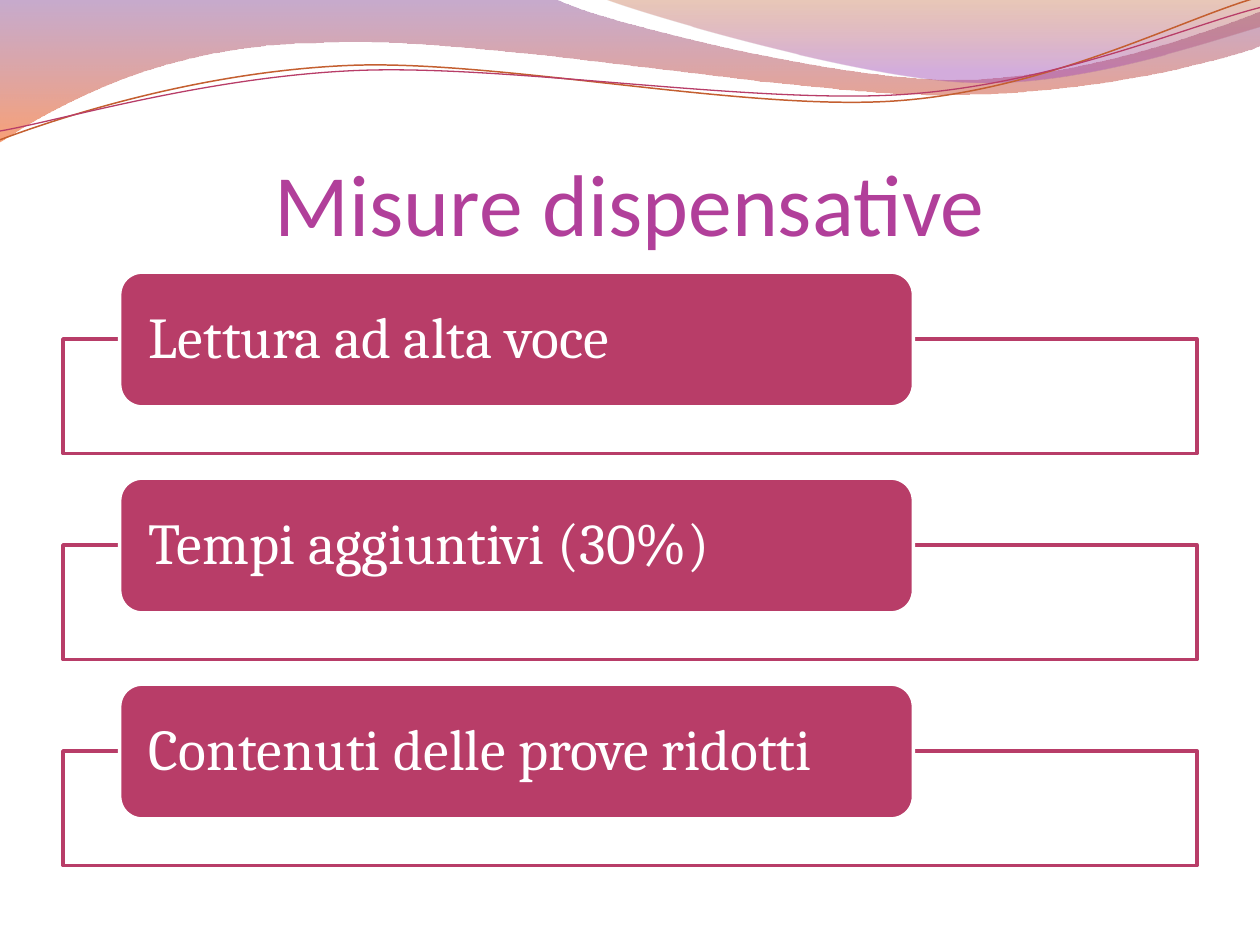
from typing import NamedTuple

from lxml.etree import SubElement
from pptx import Presentation
from pptx.dml.color import RGBColor
from pptx.enum.shapes import MSO_SHAPE as Preset
from pptx.enum.text import MSO_ANCHOR as Anchor, MSO_AUTO_SIZE as AutoSize, PP_ALIGN as Align
from pptx.oxml.ns import qn
from pptx.util import Inches, Pt

WHITE = RGBColor(0xFF, 0xFF, 0xFF)
ROSE = RGBColor(0xB8, 0x3D, 0x68)
MAGENTA = RGBColor(0xB1, 0x3F, 0x9A)
VIOLET = RGBColor(0x83, 0x45, 0x91)
LILAC = RGBColor(0xA1, 0x4B, 0xB4)
ORANGE = RGBColor(0xF3, 0x53, 0x07)
RUST = RGBColor(0xB7, 0x49, 0x15)
COPPER = RGBColor(0xC4, 0x5F, 0x30)

Point = tuple[float, float]
Segment = tuple[Point, ...]  # one point: line, three points: Bézier curve


class Stop(NamedTuple):
    position: float
    color: RGBColor
    opacity: int


class Band(NamedTuple):
    start: Point
    segments: list[Segment]
    stops: list[Stop]


class Wave(NamedTuple):
    start: Point
    segments: list[Segment]
    color: RGBColor
    width: float


BANDS = [
    Band((0, -0.01), [
        ((4.4, -0.01),),
        ((4.76, 0.17), (6.64, 0.63), (7.58, 0.63)),
        ((8.53, 0.63), (9.58, 0.26), (10, 0.09)),
        ((10.01, 0.36),),
        ((9.83, 0.44), (8.7, 0.76), (7.46, 0.75)),
        ((6.22, 0.75), (3.82, 0.28), (2.57, 0.34)),
        ((1.29, 0.35), (0.46, 0.83), (-0.01, 1.13)),
    ], [Stop(0, VIOLET, 45), Stop(1, ORANGE, 55)]),
    Band((4.79, -0.01), [
        ((5.09, 0.11), (6.82, 0.62), (7.69, 0.65)),
        ((8.56, 0.69), (9.61, 0.32), (10, 0.21)),
        ((10, 0),),
    ], [Stop(0, RUST, 30), Stop(0.8, LILAC, 45)]),
]
WAVES = [
    Wave((0, 1.11), [
        ((0.48, 0.93), (1.58, 0.57), (2.77, 0.52)),
        ((3.95, 0.47), (5.93, 0.89), (7.13, 0.8)),
        ((8.33, 0.71), (9.38, 0.15), (9.98, -0.02)),
    ], COPPER, 0.85),
    Wave((0, 1.04), [
        ((0.47, 0.96), (1.64, 0.61), (2.83, 0.56)),
        ((4.03, 0.51), (5.97, 0.83), (7.17, 0.75)),
        ((8.36, 0.67), (9.41, 0.21), (10, 0.06)),
    ], ROSE, 0.75),
]
MEASURES = ["Lettura ad alta voce", "Tempi aggiuntivi (30%)", "Contenuti delle prove ridotti"]
FIRST_TOP, LAST_TOP = 2.16, 5.43
ROW_PITCH = (LAST_TOP - FIRST_TOP) / (len(MEASURES) - 1)


def set_opacity(shape, opacities: list[int]) -> None:
    """Give each fill colour of the shape its opacity in percent."""
    for color, opacity in zip(shape.element.spPr.iter(qn("a:srgbClr")), opacities):
        SubElement(color, qn("a:alpha")).set("val", str(opacity * 1000))


def bend_curves(shape, segments: list[Segment]) -> None:
    """Join each run of three straight steps into one Bézier curve."""
    steps = iter(list(shape.element.spPr.iter(qn("a:lnTo"))))
    for segment in segments:
        curve, *others = [next(steps) for _ in segment]
        if others:
            curve.tag = qn("a:cubicBezTo")
        for other in others:
            curve.append(other[0])
            other.getparent().remove(other)


def draw_outline(slide, start: Point, segments: list[Segment], close: bool):
    points = [start] + [point for segment in segments for point in segment]
    vertices = [(Inches(x), Inches(y)) for x, y in points]
    builder = slide.shapes.build_freeform(*vertices[0])
    builder.add_line_segments(vertices[1:], close=close)
    shape = builder.convert_to_shape()
    bend_curves(shape, segments)
    shape.shadow.inherit = False
    return shape


def draw_band(slide, band: Band) -> None:
    shape = draw_outline(slide, band.start, band.segments, close=True)
    shape.line.fill.background()
    shape.fill.gradient()
    shape.fill.gradient_angle = 270
    for gradient_stop, stop in zip(shape.fill.gradient_stops, band.stops):
        gradient_stop.position = stop.position
        gradient_stop.color.rgb = stop.color
    set_opacity(shape, [stop.opacity for stop in band.stops])


def draw_wave(slide, wave: Wave) -> None:
    shape = draw_outline(slide, wave.start, wave.segments, close=False)
    shape.fill.background()
    shape.line.color.rgb = wave.color
    shape.line.width = Pt(wave.width)


def add_box(slide, preset: Preset, left: float, top: float, width: float, height: float,
            fill: RGBColor, line: RGBColor):
    shape = slide.shapes.add_shape(preset, Inches(left), Inches(top), Inches(width), Inches(height))
    shape.shadow.inherit = False
    shape.fill.solid()
    shape.fill.fore_color.rgb = fill
    shape.line.color.rgb = line
    shape.line.width = Pt(2)
    return shape


def draw_measure(slide, text: str, top: float) -> None:
    frame = add_box(slide, Preset.RECTANGLE, 0.5, top + 0.53, 9, 0.91, WHITE, ROSE)
    set_opacity(frame, [90])
    label = add_box(slide, Preset.ROUNDED_RECTANGLE, 0.95, top, 6.3, 1.07, ROSE, WHITE)
    text_frame = label.text_frame
    text_frame.word_wrap = True
    text_frame.vertical_anchor = Anchor.MIDDLE
    text_frame.margin_left = text_frame.margin_right = Inches(0.18)
    text_frame.margin_top = text_frame.margin_bottom = 0
    paragraph = text_frame.paragraphs[0]
    paragraph.text = text
    paragraph.alignment = Align.LEFT
    paragraph.line_spacing = 0.9
    paragraph.font.name = "Cambria"
    paragraph.font.size = Pt(33)
    paragraph.font.color.rgb = WHITE


def set_title(slide, text: str) -> None:
    title = slide.shapes.title
    title.left, title.top, title.width, title.height = map(Inches, (0.5, 0.77, 9, 1.25))
    text_frame = title.text_frame
    text_frame.auto_size = AutoSize.NONE
    text_frame.vertical_anchor = Anchor.BOTTOM
    text_frame.margin_left = text_frame.margin_right = text_frame.margin_bottom = 0
    paragraph = text_frame.paragraphs[0]
    paragraph.text = text
    paragraph.alignment = Align.CENTER
    paragraph.font.name = "Calibri"
    paragraph.font.size = Pt(50)
    paragraph.font.color.rgb = MAGENTA


def main() -> None:
    presentation = Presentation()
    presentation.slide_width, presentation.slide_height = Inches(10), Inches(7.5)
    slide = presentation.slides.add_slide(presentation.slide_layouts[5])  # Title Only

    # Decorative header
    for band in BANDS:
        draw_band(slide, band)
    for wave in WAVES:
        draw_wave(slide, wave)

    # Title and list of measures
    set_title(slide, "Misure dispensative")
    for row, measure in enumerate(MEASURES):
        draw_measure(slide, measure, FIRST_TOP + row * ROW_PITCH)

    presentation.save("out.pptx")


if __name__ == "__main__":
    main()
